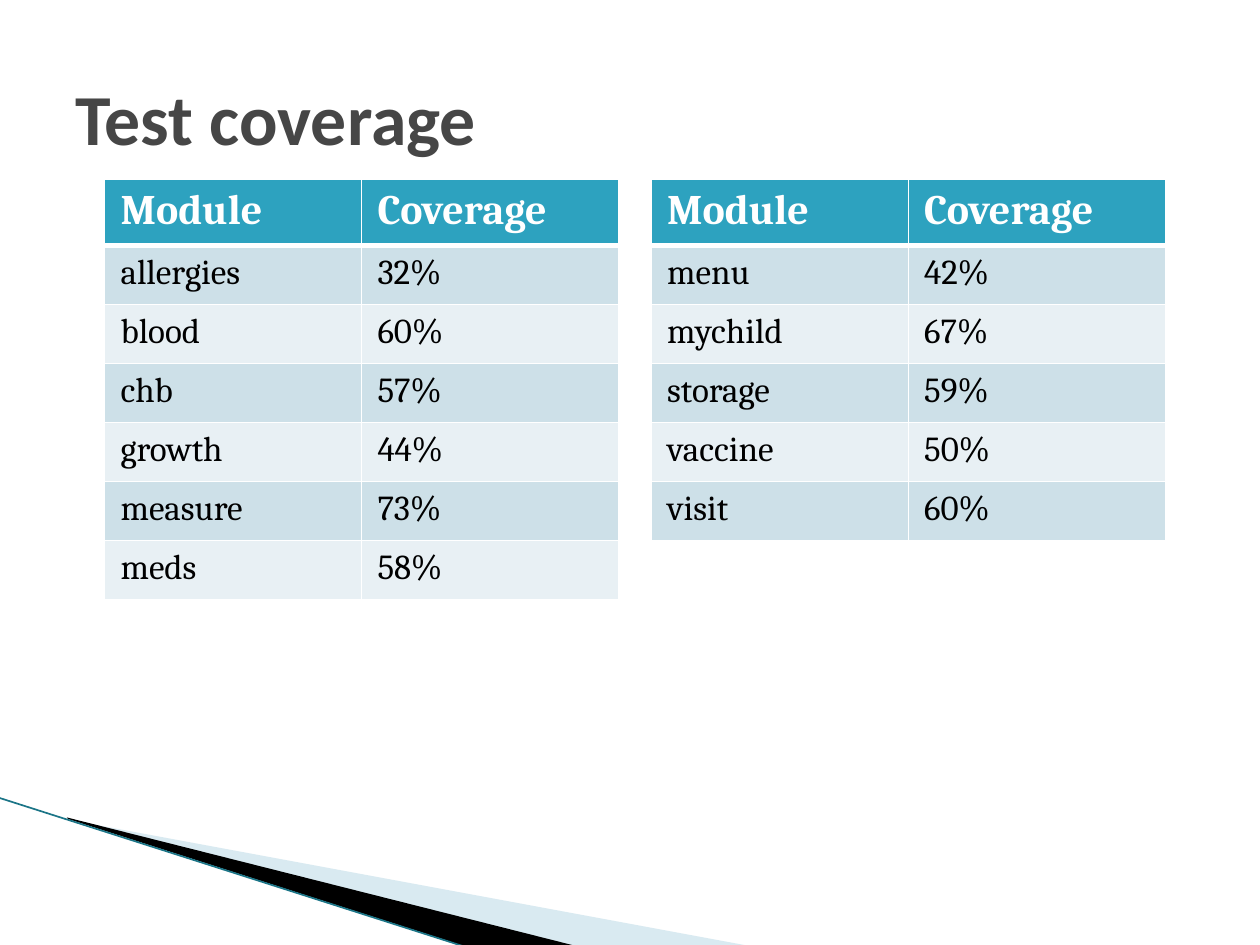
from dataclasses import dataclass

from lxml.etree import SubElement
from pptx import Presentation
from pptx.dml.color import RGBColor
from pptx.enum.shapes import MSO_CONNECTOR
from pptx.enum.text import MSO_ANCHOR
from pptx.oxml.ns import qn
from pptx.slide import Slide
from pptx.table import _Cell
from pptx.util import Cm, Pt

WHITE = RGBColor(0xFF, 0xFF, 0xFF)
BLACK = RGBColor(0x00, 0x00, 0x00)
GREY = RGBColor(0x46, 0x46, 0x46)
TEAL = RGBColor(0x2D, 0xA2, 0xBF)
DARK_TEAL = RGBColor(0x1B, 0x75, 0x87)
PALE_BLUE = RGBColor(0xA0, 0xCB, 0xDC)
BANDS = (RGBColor(0xCD, 0xE0, 0xE8), RGBColor(0xE8, 0xF0, 0xF4))

HEADER = ("Module", "Coverage")
TABLE_TOP = 3.61
COL_WIDTH = 5.18
ROW_HEIGHT = 1.19


@dataclass(frozen=True)
class CoverageTable:
    left: float
    rows: tuple[tuple[str, str], ...]


@dataclass(frozen=True)
class Wedge:
    points: tuple[tuple[float, float], ...]
    color: RGBColor
    opacity: int = 100


TABLES = (
    CoverageTable(2.11, (
        ("allergies", "32%"), ("blood", "60%"), ("chb", "57%"),
        ("growth", "44%"), ("measure", "73%"), ("meds", "58%"),
    )),
    CoverageTable(13.13, (
        ("menu", "42%"), ("mychild", "67%"), ("storage", "59%"),
        ("vaccine", "50%"), ("visit", "60%"),
    )),
)

WEDGES = (
    Wedge(((1.4, 16.53), (15.11, 19.07), (11.58, 19.07), (1.4, 16.51)), PALE_BLUE, 40),
    Wedge(((1.35, 16.48), (11.61, 19.07), (9.45, 19.1), (1.37, 16.51)), BLACK),
)


def draw_wedge(s: Slide, wedge: Wedge) -> None:
    points = [(Cm(x), Cm(y)) for x, y in wedge.points]
    builder = s.shapes.build_freeform(*points[0])
    builder.add_line_segments(points[1:], close=True)
    sp = builder.convert_to_shape()
    sp.shadow.inherit = False
    sp.line.fill.background()
    sp.fill.solid()
    sp.fill.fore_color.rgb = wedge.color
    if wedge.opacity < 100:
        color = sp.fill._xPr.find(qn("a:solidFill"))[0]
        SubElement(color, qn("a:alpha"), val=str(wedge.opacity * 1000))


def draw_edge(s: Slide) -> None:
    line = s.shapes.add_connector(
        MSO_CONNECTOR.STRAIGHT, Cm(-0.03), Cm(16.08), Cm(9.42), Cm(19.1))
    line.line.color.rgb = DARK_TEAL
    line.line.width = Pt(0.95)
    SubElement(line._element.spPr, qn("a:effectLst"))


def draw_title(s: Slide, text: str) -> None:
    sp = s.shapes.add_textbox(Cm(1.27), Cm(0.76), Cm(22.86), Cm(3.18))
    tf = sp.text_frame
    tf.word_wrap = True
    tf.vertical_anchor = MSO_ANCHOR.MIDDLE
    p = tf.paragraphs[0]
    p.text = text
    p.font.name = "Calibri"
    p.font.size = Pt(41)
    p.font.bold = True
    p.font.color.rgb = GREY


def set_borders(cell: _Cell, top: int, bottom: int) -> None:
    tc_pr = cell._tc.get_or_add_tcPr()
    for side, width in (("L", 1), ("R", 1), ("T", top), ("B", bottom)):
        ln = SubElement(tc_pr, qn(f"a:ln{side}"), w=str(Pt(width)))
        fill = SubElement(ln, qn("a:solidFill"))
        SubElement(fill, qn("a:srgbClr"), val=str(WHITE))


def fill_cell(cell: _Cell, text: str, row: int) -> None:
    header = row == 0
    set_borders(cell, top=3 if row == 1 else 1, bottom=3 if header else 1)
    cell.fill.solid()
    cell.fill.fore_color.rgb = TEAL if header else BANDS[(row - 1) % 2]
    cell.margin_left = cell.margin_right = Cm(0.32)
    cell.margin_top = cell.margin_bottom = Cm(0.16)
    p = cell.text_frame.paragraphs[0]
    p.text = text
    p.font.name = "Cambria"
    p.font.size = Pt(24 if header else 20)
    p.font.bold = header
    p.font.color.rgb = WHITE if header else BLACK


def draw_table(s: Slide, coverage: CoverageTable) -> None:
    rows = (HEADER, *coverage.rows)
    table = s.shapes.add_table(
        len(rows), len(HEADER), Cm(coverage.left), Cm(TABLE_TOP),
        Cm(COL_WIDTH * len(HEADER)), Cm(ROW_HEIGHT * len(rows))).table
    for column in table.columns:
        column.width = Cm(COL_WIDTH)
    for r, values in enumerate(rows):
        table.rows[r].height = Cm(ROW_HEIGHT)
        for c, text in enumerate(values):
            fill_cell(table.cell(r, c), text, r)


def main() -> None:
    prs = Presentation()
    prs.slide_width, prs.slide_height = Cm(25.4), Cm(19.05)
    s = prs.slides.add_slide(prs.slide_layouts[6])
    for wedge in WEDGES:
        draw_wedge(s, wedge)
    draw_edge(s)
    draw_title(s, "Test coverage")
    for coverage in TABLES:
        draw_table(s, coverage)
    prs.save("out.pptx")


if __name__ == "__main__":
    main()
